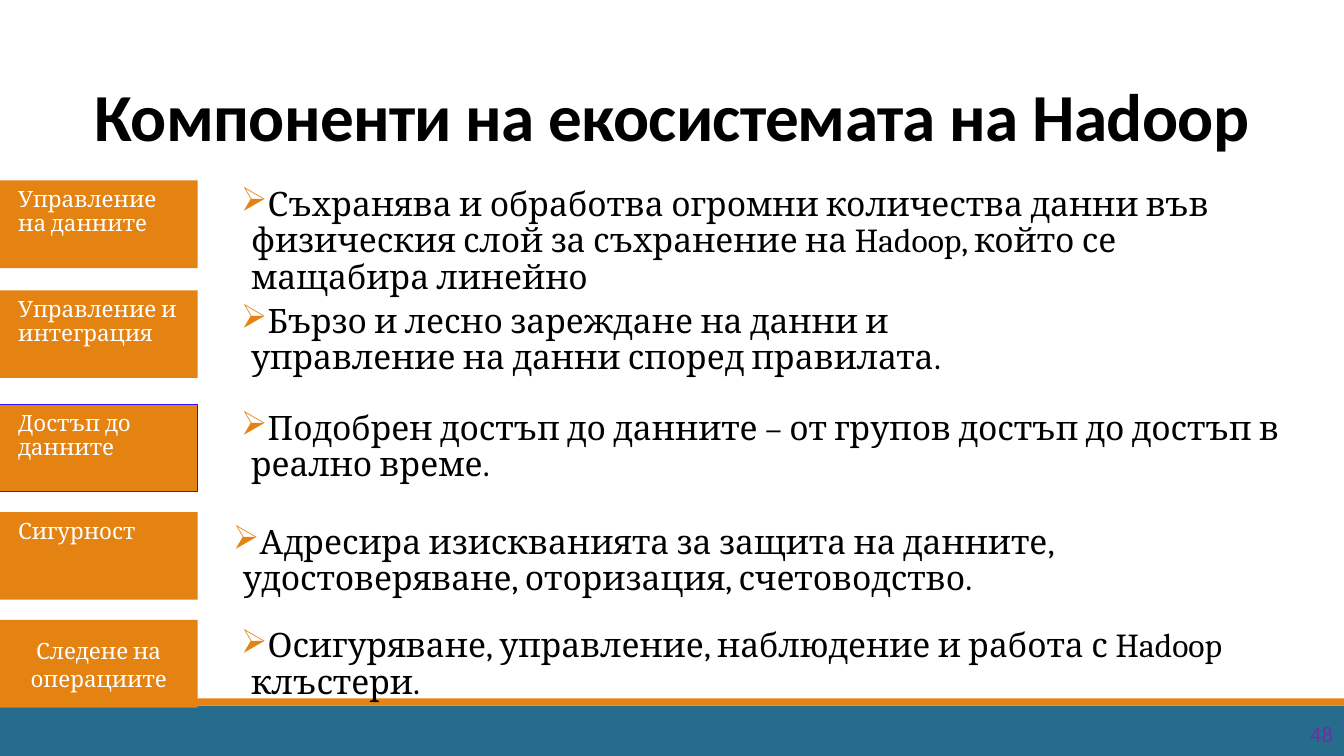
import pptx
import pptx.util
import pptx.dml.color
import pptx.enum.shapes
import pptx.enum.text
import pptx.oxml.ns
import lxml.etree

Inches = pptx.util.Inches
Pt = pptx.util.Pt
ALIGN = pptx.enum.text.PP_ALIGN
ANCHOR = pptx.enum.text.MSO_ANCHOR

COLORS = {
    "orange": "E48312",
    "teal": "256C8D",
    "outline": "3211F7",
    "number": "7030A0",
    "black": "000000",
    "white": "FFFFFF",
}

deck = pptx.Presentation()
deck.slide_width = Inches(13.33)
deck.slide_height = Inches(7.5)
page = deck.slides.add_slide(deck.slide_layouts[6])


def add_block(left, top, width, height, fill):
    block = page.shapes.add_shape(
        pptx.enum.shapes.MSO_SHAPE.RECTANGLE,
        Inches(left), Inches(top), Inches(width), Inches(height))
    block.shadow.inherit = False
    block.fill.solid()
    block.fill.fore_color.rgb = pptx.dml.color.RGBColor.from_string(COLORS[fill])
    block.line.fill.background()
    return block


def write(box, text, size, font, color, align, spacing, anchor, inset):
    frame = box.text_frame
    frame.word_wrap = True
    frame.vertical_anchor = anchor
    frame.margin_left = frame.margin_right = Inches(inset)
    frame.margin_top = frame.margin_bottom = Inches(inset)
    para = frame.paragraphs[0]
    para.text = text
    para.alignment = align
    para.line_spacing = spacing
    para.font.size = Pt(size)
    para.font.name = font
    para.font.color.rgb = pptx.dml.color.RGBColor.from_string(COLORS[color])
    return para


add_block(0, 7, 13.33, 0.5, "teal")
add_block(0, 6.93, 13.33, 0.07, "orange")

title_box = page.shapes.add_textbox(0, 0, Inches(13.33), Inches(1.59))
title = write(title_box, "Компоненти на екосистемата на Hadoop", 48, "Calibri",
              "black", ALIGN.CENTER, 0.85, ANCHOR.BOTTOM, 0.05)
title.font.bold = True
title.runs[0].font._element.set("spc", "-50")

labels = [
    ("Управление на данните", 1.79),
    ("Управление и интеграция", 2.88),
    ("Достъп до данните", 4.01),
    ("Сигурност", 5.08),
]
for text, top in labels:
    label = add_block(0, top, 1.96, 0.87, "orange")
    para = write(label, text, 16, "Cambria", "white", ALIGN.LEFT, 0.9, ANCHOR.TOP, 0.08)
    para._p.get_or_add_pPr().set("marL", str(Inches(0.1)))
    if text == "Достъп до данните":
        label.line.color.rgb = pptx.dml.color.RGBColor.from_string(COLORS["outline"])
        label.line.width = Pt(0.75)

operations = add_block(0, 6.15, 1.96, 0.87, "orange")
write(operations, "Следене на операциите", 16, "Cambria", "white",
      ALIGN.CENTER, 1.05, ANCHOR.MIDDLE, 0.07)

descriptions = [
    ("Съхранява и обработва огромни количества данни във физическия слой за "
     "съхранение на Hadoop, който се мащабира линейно",
     1.78, 10.65, 0.87, ANCHOR.TOP, 0.08),
    ("Бързо и лесно зареждане на данни и управление на данни според правилата.",
     2.94, 8.02, 0.87, ANCHOR.TOP, 0.08),
    ("Подобрен достъп до данните – от групов достъп до достъп в реално време.",
     4, 10.89, 0.87, ANCHOR.TOP, 0.08),
    ("Адресира изискванията за защита на данните, удостоверяване, оторизация, "
     "счетоводство.",
     5.1, 10.89, 0.94, ANCHOR.MIDDLE, 0),
    ("Осигуряване, управление, наблюдение и работа с Hadoop клъстери.",
     6.16, 10.89, 0.87, ANCHOR.TOP, 0.08),
]
for text, top, width, height, anchor, inset in descriptions:
    box = page.shapes.add_textbox(Inches(2.31), Inches(top), Inches(width), Inches(height))
    properties = box.text_frame.paragraphs[0]._p.get_or_add_pPr()
    properties.set("marL", str(Inches(0.1)))
    properties.set("indent", str(Inches(-0.16)))
    bullet_color = lxml.etree.SubElement(properties, pptx.oxml.ns.qn("a:buClr"))
    lxml.etree.SubElement(bullet_color, pptx.oxml.ns.qn("a:srgbClr"), val=COLORS["orange"])
    lxml.etree.SubElement(properties, pptx.oxml.ns.qn("a:buChar"), char="➢")
    para = write(box, text, 24, "Cambria", "black", ALIGN.LEFT, 0.9, anchor, inset)
    para.space_after = Pt(2)

number_box = page.shapes.add_textbox(Inches(12.6), Inches(7.08), Inches(0.66), Inches(0.4))
write(number_box, "48", 16, "Calibri", "number", ALIGN.RIGHT, 1.0, ANCHOR.MIDDLE, 0.04)

deck.save("out.pptx")
